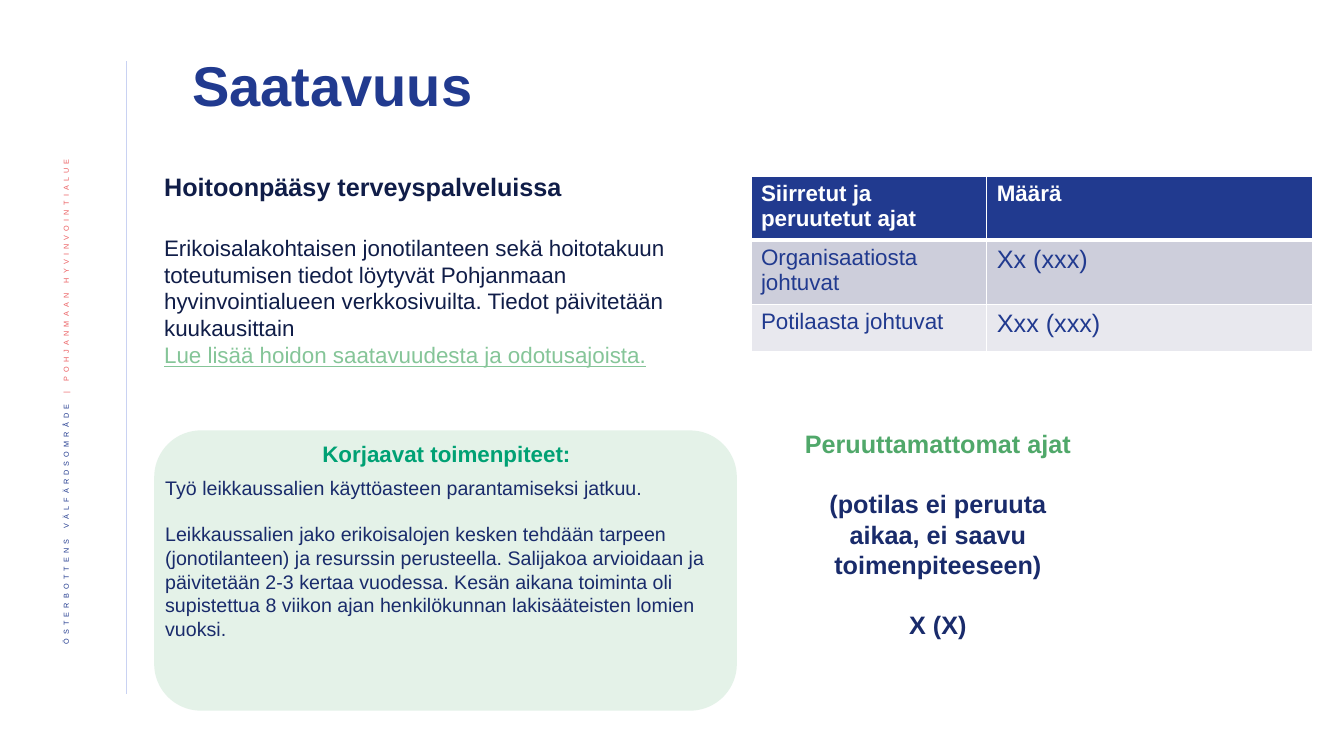
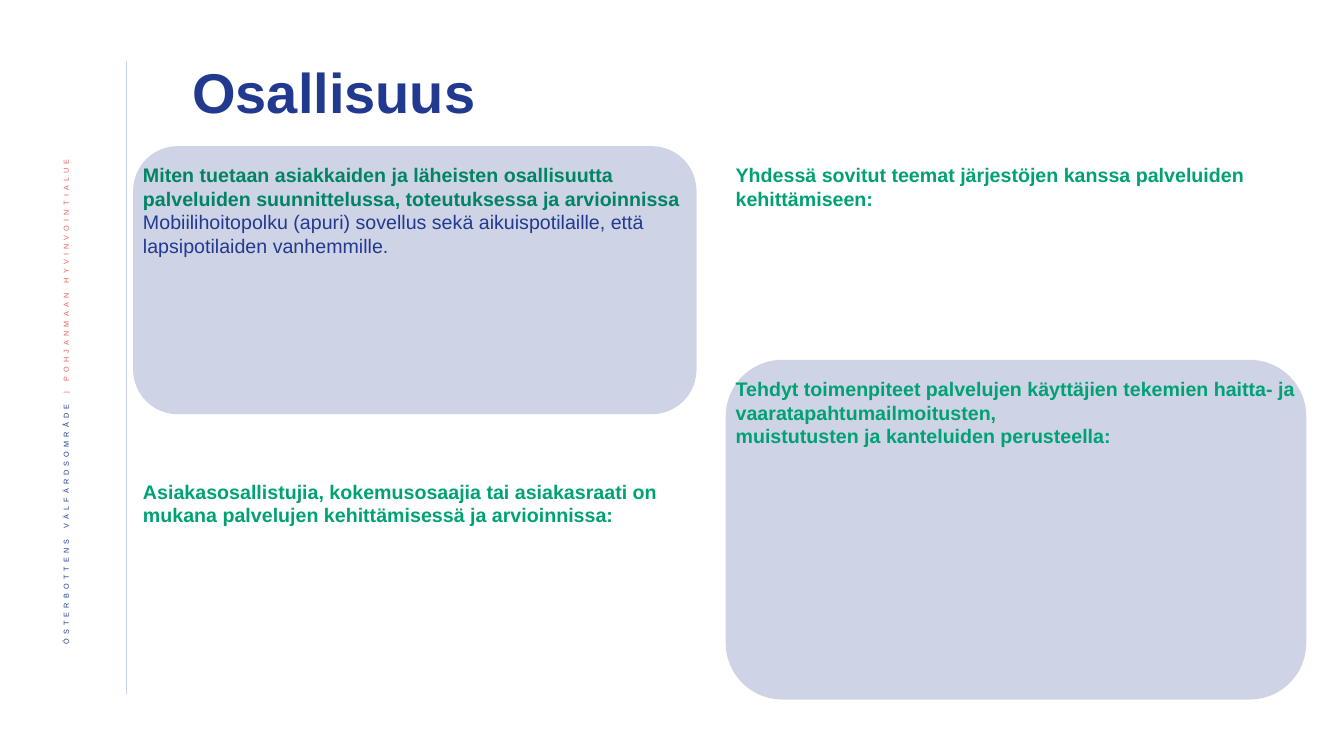
from dataclasses import dataclass

from lxml import etree
from pptx import Presentation
from pptx import util as u
from pptx.dml import color
from pptx.enum import shapes, text
from pptx.oxml import ns

# Grid of square cells: 160 columns by 90 rows
COLUMNS, ROWS = 160, 90
CELL = u.Inches(7.5) / ROWS
FONT = "Arial"
COLORS = {
    "blue": "213A8F", "navy": "192B6B", "ink": "101D48", "rule": "C9D2F2",
    "coral": "EB5C5F", "green": "00A174", "deep green": "008464",
    "leaf": "50A86A", "mint": "85C598", "white": "FFFFFF",
    "band dark": "CDCEDB", "band light": "E8E8EE",
}
CENTER, RIGHT = text.PP_ALIGN.CENTER, text.PP_ALIGN.RIGHT


@dataclass(frozen=True)
class Box:
    """Area in grid columns and rows."""
    left: float
    top: float
    width: float
    height: float

    def emu(self) -> list[int]:
        return [grid(n) for n in (self.left, self.top, self.width, self.height)]


@dataclass(frozen=True)
class Line:
    """One paragraph of text with its format."""
    words: str
    size: float
    color: str
    bold: bool = False
    underline: bool = False
    align: text.PP_ALIGN | None = None
    before: float = 0
    after: float = 0


@dataclass(frozen=True)
class Question:
    """Topic on the participation slide, with an optional panel behind it."""
    box: Box
    lines: tuple[Line, ...]
    panel_rows: float = 0


def grid(cells: float) -> int:
    return round(cells * CELL)


def rgb(name: str) -> color.RGBColor:
    return color.RGBColor.from_string(COLORS[name])


def add_run(paragraph, words: str, *, size: float, color: str,
            bold: bool = False, underline: bool = False):
    run = paragraph.add_run()
    run.text = words
    font = run.font
    font.name, font.size, font.bold = FONT, u.Pt(size), bold
    if underline:
        font.underline = True
    font.color.rgb = rgb(color)
    return run


def write_lines(frame, *lines: Line) -> None:
    for index, line in enumerate(lines):
        paragraph = frame.add_paragraph() if index else frame.paragraphs[0]
        paragraph.alignment = line.align
        if line.before:
            paragraph.space_before = u.Pt(line.before)
        if line.after:
            paragraph.space_after = u.Pt(line.after)
        add_run(paragraph, line.words, size=line.size, color=line.color,
                bold=line.bold, underline=line.underline)


def add_text(slide, box: Box, *lines: Line, middle: bool = False):
    frame = slide.shapes.add_textbox(*box.emu()).text_frame
    frame.word_wrap = True
    if middle:
        frame.vertical_anchor = text.MSO_ANCHOR.MIDDLE
    write_lines(frame, *lines)
    return frame


def add_panel(slide, box: Box, fill: str) -> None:
    panel = slide.shapes.add_shape(shapes.MSO_SHAPE.ROUNDED_RECTANGLE, *box.emu())
    panel.shadow.inherit = False
    panel.line.fill.background()
    panel.fill.solid()
    panel.fill.fore_color.rgb = rgb(fill)
    tint = panel.fill._xPr.find(".//" + ns.qn("a:srgbClr"))
    etree.SubElement(tint, ns.qn("a:alpha"), val="22000")


def add_frame(slide, title: str, title_box: Box) -> None:
    """Side rule, vertical organisation name and slide title."""
    rule = slide.shapes.add_connector(
        shapes.MSO_CONNECTOR.STRAIGHT, grid(15), grid(7.3), grid(15), grid(82.6))
    rule.line.color.rgb = rgb("rule")
    rule.line.width = u.Pt(0.5)
    etree.SubElement(rule._element.spPr, ns.qn("a:effectLst"))

    side = add_text(slide, Box(5.04, 17.04, 6.24, 68.76), middle=True)
    side._txBody.bodyPr.set("vert", "vert270")
    name = side.paragraphs[0]
    name.alignment, name.line_spacing = RIGHT, 0.9
    for words, tone in (("ÖSTERBOTTENS VÄLFÄRDSOMRÅDE ", "blue"),
                        ("| POHJANMAAN HYVINVOINTIALUE ", "coral")):
        properties = add_run(name, words, size=9, color=tone)._r.get_or_add_rPr()
        properties.set("baseline", "30000")
        properties.set("spc", "300")

    heading = add_text(slide, title_box, Line(title, 40, "blue", bold=True), middle=True)
    heading.paragraphs[0].line_spacing = 0.9


def style_cell(cell, fill: str, bottom: float) -> None:
    properties = cell._tc.get_or_add_tcPr()
    for side, width in (("L", 1), ("R", 1), ("T", 1), ("B", bottom)):
        edge = etree.SubElement(properties, ns.qn(f"a:ln{side}"), w=str(u.Pt(width)))
        paint = etree.SubElement(edge, ns.qn("a:solidFill"))
        etree.SubElement(paint, ns.qn("a:srgbClr"), val=COLORS["white"])
    cell.fill.solid()
    cell.fill.fore_color.rgb = rgb(fill)


def add_appointments(slide) -> None:
    """Table of moved and cancelled appointments."""
    widths, heights = (28.08, 38.76), (7.4, 7.4, 5.64)
    rows = (("Siirretut ja peruutetut ajat", "Määrä"),
            ("Organisaatiosta johtuvat", "Xx (xxx)"),
            ("Potilaasta johtuvat", "Xxx (xxx)"))
    fills = ("blue", "band dark", "band light")
    box = Box(89.4, 21, sum(widths), sum(heights))
    table = slide.shapes.add_table(len(rows), len(widths), *box.emu()).table
    for column, width in zip(table.columns, widths):
        column.width = grid(width)
    for r, (words, fill, height) in enumerate(zip(rows, fills, heights)):
        table.rows[r].height = grid(height)
        header = r == 0
        for c, word in enumerate(words):
            cell = table.cell(r, c)
            style_cell(cell, fill, 3 if header else 1)
            write_lines(cell.text_frame, Line(
                word, 18 if c and not header else 16,
                "white" if header else "blue", bold=header))


def build_availability(slide) -> None:
    add_frame(slide, "Saatavuus", Box(21.72, 5.4, 131.76, 10.2))

    # Corrective measures
    add_panel(slide, Box(18.36, 51.24, 69.36, 33.36), "mint")
    add_text(
        slide, Box(18.48, 51.84, 69.36, 28.92),
        Line("Korjaavat toimenpiteet:", 16, "green", bold=True, align=CENTER, after=6),
        Line("Työ leikkaussalien käyttöasteen parantamiseksi jatkuu.", 14, "navy"),
        Line("Leikkaussalien jako erikoisalojen kesken tehdään tarpeen (jonotilanteen) "
             "ja resurssin perusteella. Salijakoa arvioidaan ja päivitetään 2-3 kertaa "
             "vuodessa. Kesän aikana toiminta oli supistettua 8 viikon ajan "
             "henkilökunnan lakisääteisten lomien vuoksi.", 14, "navy", before=16.5))

    add_appointments(slide)

    # Access to care
    add_text(slide, Box(18.36, 19.8, 69.24, 4.8),
             Line("Hoitoonpääsy terveyspalveluissa", 18, "ink", bold=True))
    add_text(
        slide, Box(18.36, 27.24, 67.44, 17.4),
        Line("Erikoisalakohtaisen jonotilanteen sekä hoitotakuun toteutumisen tiedot "
             "löytyvät Pohjanmaan hyvinvointialueen verkkosivuilta. Tiedot päivitetään "
             "kuukausittain", 16, "ink"),
        Line("Lue lisää hoidon saatavuudesta ja odotusajoista.", 16, "mint",
             underline=True))

    # Missed appointments
    add_text(
        slide, Box(93.24, 50.4, 36.84, 26.64),
        Line("Peruuttamattomat ajat", 18, "leaf", bold=True, align=CENTER),
        *(Line(words, 18, "navy", bold=True, align=CENTER, before=21.5)
          for words in ("(potilas ei peruuta aikaa, ei saavu toimenpiteeseen)",
                        "X (X)")))


def build_participation(slide) -> None:
    add_frame(slide, "Osallisuus", Box(21.72, 5.4, 119.76, 11.88))
    (left, left_width), (right, right_width) = (15.84, 67.08), (86.4, 69.12)
    panel_padding = 1.44
    questions = (
        Question(Box(left, 18.84, left_width, 15.36), (
            Line("Miten tuetaan asiakkaiden ja läheisten osallisuutta palveluiden "
                 "suunnittelussa, toteutuksessa ja arvioinnissa",
                 14, "deep green", bold=True),
            Line("Mobiilihoitopolku (apuri) sovellus sekä aikuispotilaille, että "
                 "lapsipotilaiden vanhemmille.", 14, "blue")), panel_rows=31.92),
        Question(Box(right, 18.84, right_width, 6.84), (
            Line("Yhdessä sovitut teemat järjestöjen kanssa palveluiden kehittämiseen:",
                 14, "green", bold=True),)),
        Question(Box(left, 56.52, left_width, 9.72), (
            Line("Asiakasosallistujia, kokemusosaajia tai asiakasraati on mukana "
                 "palvelujen kehittämisessä ja arvioinnissa:",
                 14, "green", bold=True),)),
        Question(Box(right, 44.28, right_width, 18.12), (
            Line("Tehdyt toimenpiteet palvelujen käyttäjien tekemien haitta- ja "
                 "vaaratapahtumailmoitusten,", 14, "green", bold=True),
            Line("muistutusten ja kanteluiden perusteella:", 14, "green", bold=True)),
            panel_rows=40.44),
    )
    for question in questions:
        box = question.box
        if question.panel_rows:
            add_panel(slide, Box(box.left, box.top - panel_padding, box.width,
                                 question.panel_rows), "blue")
        add_text(slide, box, *question.lines)


def main() -> None:
    deck = Presentation()
    deck.slide_width, deck.slide_height = grid(COLUMNS), grid(ROWS)
    blank = deck.slide_layouts[6]
    for build in (build_availability, build_participation):
        build(deck.slides.add_slide(blank))
    deck.save("out.pptx")


if __name__ == "__main__":
    main()
